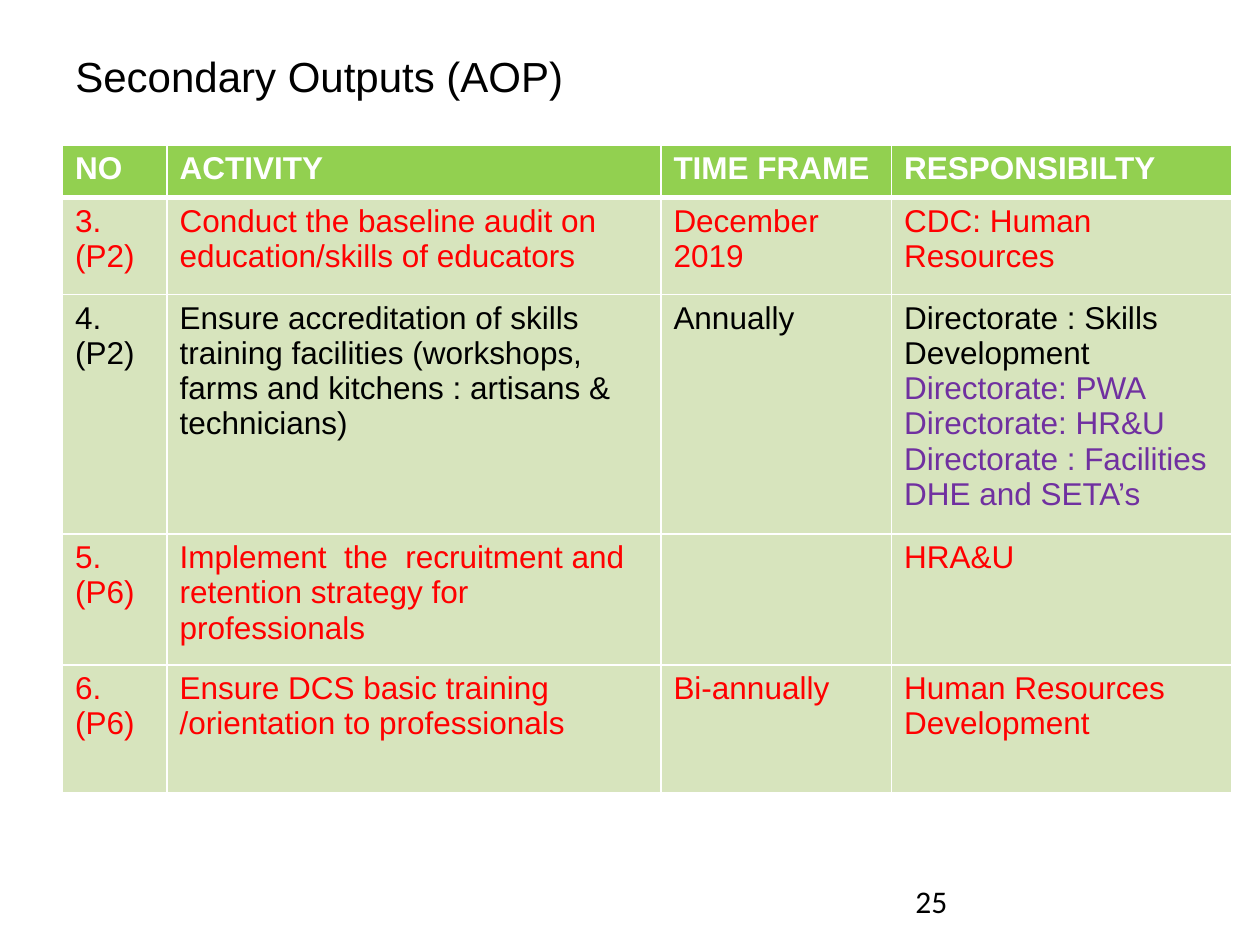
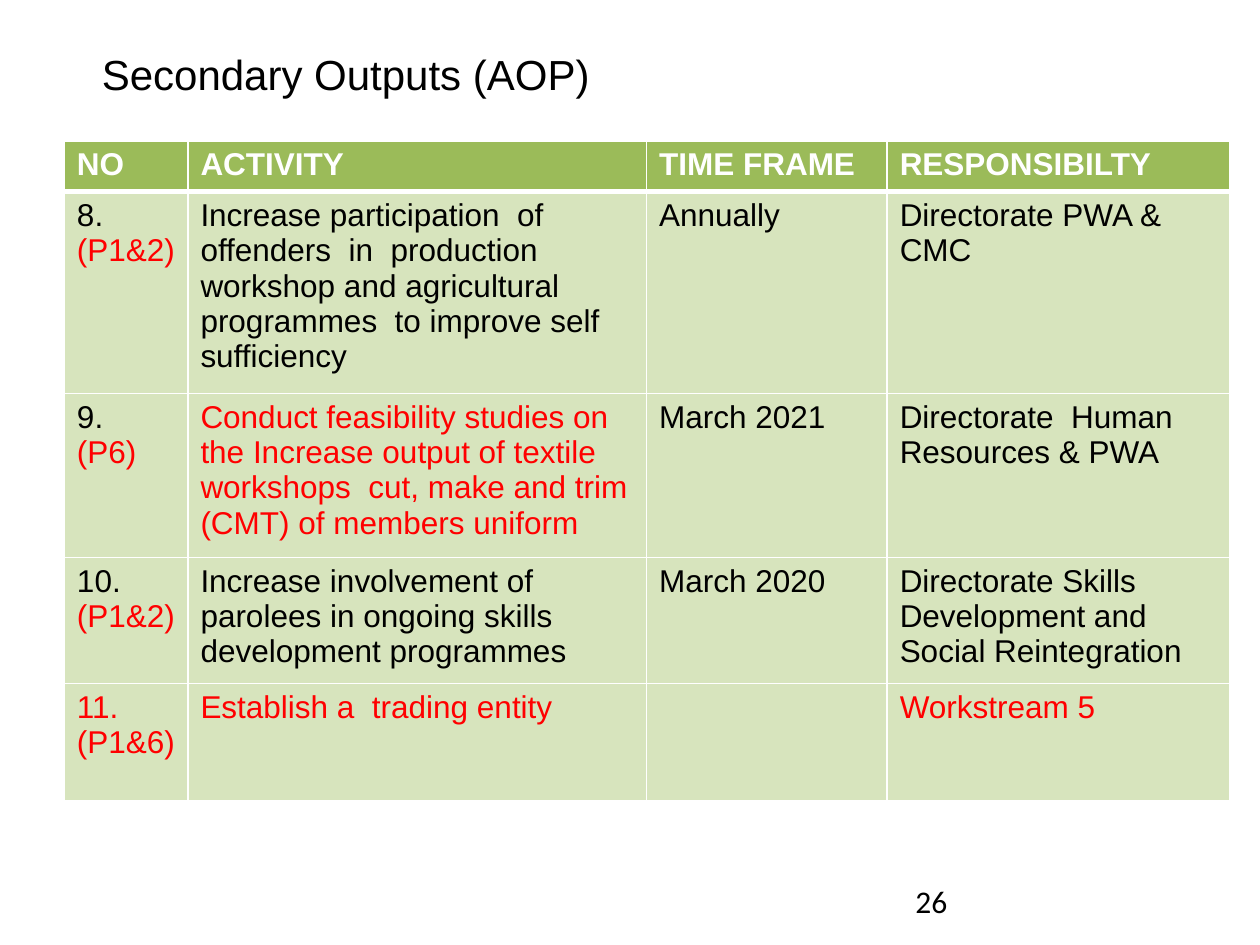
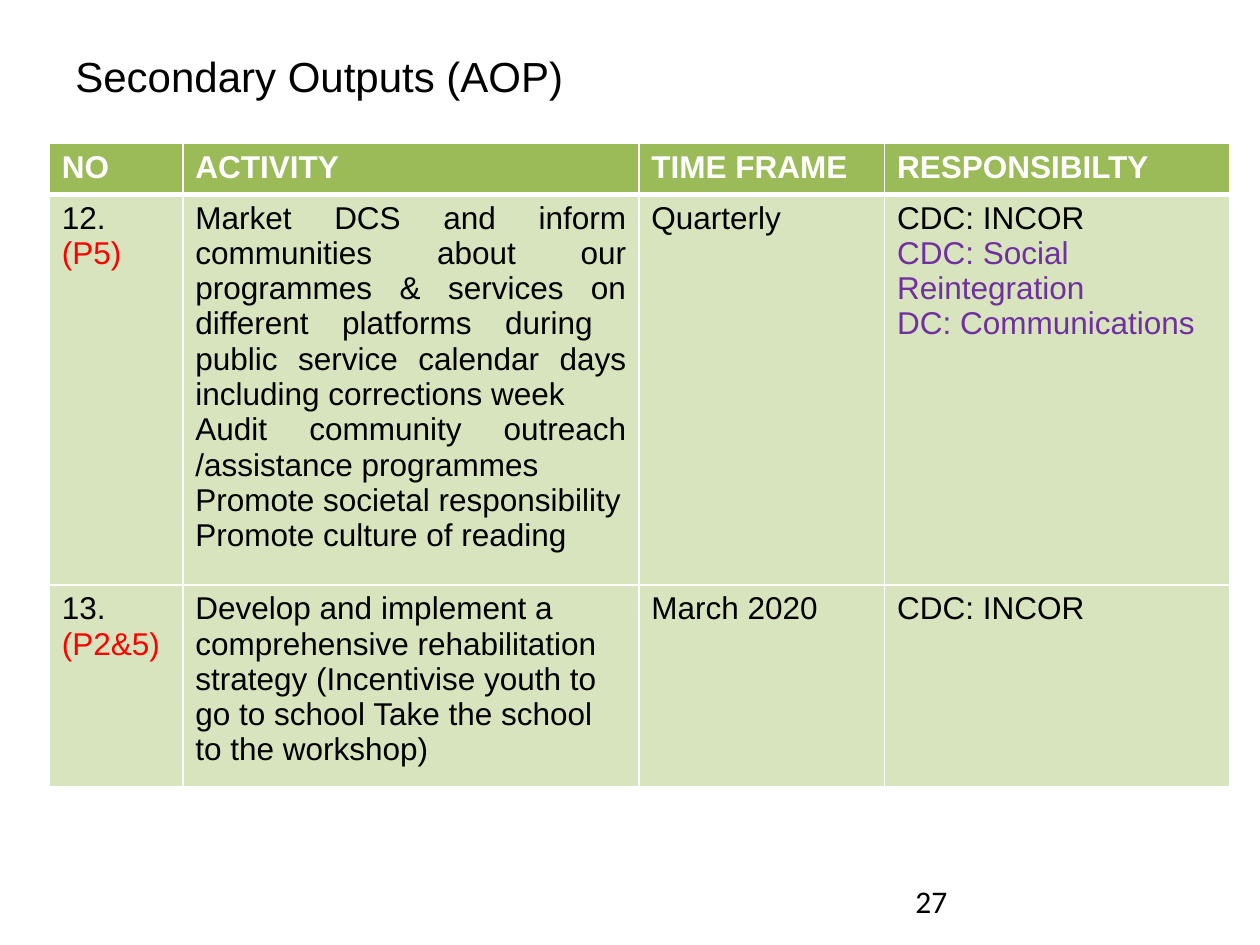
from dataclasses import dataclass, field

import pptx
import pptx.dml.color
import pptx.enum.text
import pptx.oxml
import pptx.oxml.ns
import pptx.util

Pt = pptx.util.Pt


@dataclass
class Theme:
    font: str = "Arial"
    number_font: str = "Calibri"
    title_size: int = 24
    body_size: int = 18
    grid_line: float = 1
    header_line: float = 3
    colours: dict = field(default_factory=lambda: {
        "black": "000000", "white": "FFFFFF", "red": "FF0000", "purple": "7030A0",
        "lime": "92D050", "olive": "9BBB59", "pale": "D7E4BD",
    })


THEME = Theme()


def black(*lines):
    return [("black", line) for line in lines]


def red(*lines):
    return [("red", line) for line in lines]


def purple(*lines):
    return [("purple", line) for line in lines]


# Content: each cell is a list of (colour, line) pairs
TITLE = "Secondary Outputs (AOP)"
HEADINGS = ["NO", "ACTIVITY", "TIME FRAME", "RESPONSIBILTY"]

PAGES = [
    {
        "number": "25", "title_at": (36, 29.4), "table_at": (35.7, 82.8),
        "header_fill": "lime", "columns": [59.8, 282.2, 131.8, 194.4],
        "row_heights": [30, 55.4, 128, 74.9, 73.1],
        "rows": [
            [red("3.", "(P2)"),
             red("Conduct the baseline audit on education/skills of educators"),
             red("December 2019"), red("CDC: Human Resources")],
            [black("4.", "(P2)"),
             black("Ensure accreditation of skills training facilities (workshops, "
                   "farms and kitchens : artisans & technicians)"),
             black("Annually"),
             black("Directorate : Skills Development")
             + purple("Directorate: PWA", "Directorate: HR&U",
                      "Directorate : Facilities", "DHE and SETA’s")],
            [red("5.", "(P6)"),
             red("Implement  the  recruitment and retention strategy for professionals"),
             [], red("HRA&U")],
            [red("6.", "(P6)"),
             red("Ensure DCS basic training /orientation to professionals"),
             red("Bi-annually"), red("Human Resources  Development")],
        ],
    },
    {
        "number": "26", "title_at": (51.1, 28), "table_at": (36.8, 80.6),
        "header_fill": "olive", "columns": [70.6, 262.1, 137.5, 195.8],
        "row_heights": [29, 108, 88, 68, 67.2],
        "rows": [
            [black("8.") + red("(P1&2)"),
             black("Increase participation  of offenders  in  production workshop and "
                   "agricultural programmes  to improve self sufficiency"),
             black("Annually"), black("Directorate PWA & CMC")],
            [black("9.") + red("(P6)"),
             red("Conduct feasibility studies on the Increase output of textile "
                 "workshops  cut, make and trim (CMT) of members uniform"),
             black("March 2021"), black("Directorate  Human Resources & PWA")],
            [black("10.") + red("(P1&2)"),
             black("Increase involvement of parolees in ongoing skills development "
                   "programmes"),
             black("March 2020"),
             black("Directorate Skills Development and Social Reintegration")],
            [red("11.", "(P1&6)"), red("Establish a  trading entity"),
             [], red("Workstream 5")],
        ],
    },
    {
        "number": "27", "title_at": (36, 29.4), "table_at": (28.2, 82),
        "header_fill": "olive", "columns": [76.3, 260.6, 140.4, 197.3],
        "row_heights": [29, 208.6, 108],
        "justified": (1, 1),
        "rows": [
            [black("12.") + red("(P5)"),
             black("Market DCS and inform communities about our programmes & services "
                   "on different platforms during  public service calendar days "
                   "including corrections week",
                   "Audit community outreach /assistance programmes ",
                   "Promote societal responsibility", "Promote culture of reading"),
             black("Quarterly"),
             black("CDC: INCOR")
             + purple("CDC: Social Reintegration", "DC: Communications")],
            [black("13.") + red("(P2&5)"),
             black("Develop and implement a comprehensive rehabilitation strategy "
                   "(Incentivise youth to go to school Take the school to the workshop)"),
             black("March 2020"), black("CDC: INCOR")],
        ],
    },
]


def rgb(name):
    return pptx.dml.color.RGBColor.from_string(THEME.colours[name])


def write(frame, lines, size=THEME.body_size, font=THEME.font, bold=False, align=None):
    frame.word_wrap = True
    for index, (colour, line) in enumerate(lines):
        paragraph = frame.add_paragraph() if index else frame.paragraphs[0]
        paragraph.alignment = align
        run = paragraph.add_run()
        run.text = line
        run.font.size, run.font.name, run.font.bold = Pt(size), font, bold
        run.font.color.rgb = rgb(colour)


def add_label(slide, left, top, width, height, text, anchor, **text_format):
    frame = slide.shapes.add_textbox(Pt(left), Pt(top), Pt(width), Pt(height)).text_frame
    frame.vertical_anchor = anchor
    write(frame, black(text), **text_format)


def paint_cell(cell, fill, top, bottom):
    # Borders come before the fill in the cell properties
    properties = cell._tc.get_or_add_tcPr()
    widths = {"L": THEME.grid_line, "R": THEME.grid_line, "T": top, "B": bottom}
    for side, width in widths.items():
        properties.append(pptx.oxml.parse_xml(
            f'<a:ln{side} {pptx.oxml.ns.nsdecls("a")} w="{Pt(width)}"><a:solidFill>'
            f'<a:srgbClr val="{THEME.colours["white"]}"/></a:solidFill></a:ln{side}>'))
    cell.fill.solid()
    cell.fill.fore_color.rgb = rgb(fill)


def add_activities(slide, page):
    columns, heights = page["columns"], page["row_heights"]
    left, top = page["table_at"]
    table = slide.shapes.add_table(len(heights), len(columns), Pt(left), Pt(top),
                                   Pt(sum(columns)), Pt(sum(heights))).table
    for column, width in zip(table.columns, columns):
        column.width = Pt(width)
    for row, height in zip(table.rows, heights):
        row.height = Pt(height)

    headings = [[("white", heading)] for heading in HEADINGS]
    for r, entries in enumerate([headings] + page["rows"]):
        for c, lines in enumerate(entries):
            cell = table.cell(r, c)
            paint_cell(cell, "pale" if r else page["header_fill"],
                       top=THEME.header_line if r == 1 else THEME.grid_line,
                       bottom=THEME.grid_line if r else THEME.header_line)
            justified = page.get("justified") == (r, c)
            write(cell.text_frame, lines, bold=r == 0,
                  align=pptx.enum.text.PP_ALIGN.JUSTIFY if justified else None)


def main():
    deck = pptx.Presentation()
    deck.slide_width, deck.slide_height = Pt(720), Pt(540)
    anchors = pptx.enum.text.MSO_ANCHOR
    for page in PAGES:
        slide = deck.slides.add_slide(deck.slide_layouts[6])
        add_label(slide, *page["title_at"], 640, 28, TITLE, anchors.MIDDLE,
                  size=THEME.title_size)
        add_activities(slide, page)
        add_label(slide, 516, 500.4, 168, 29, page["number"], anchors.TOP,
                  font=THEME.number_font)
    deck.save("out.pptx")


if __name__ == "__main__":
    main()
